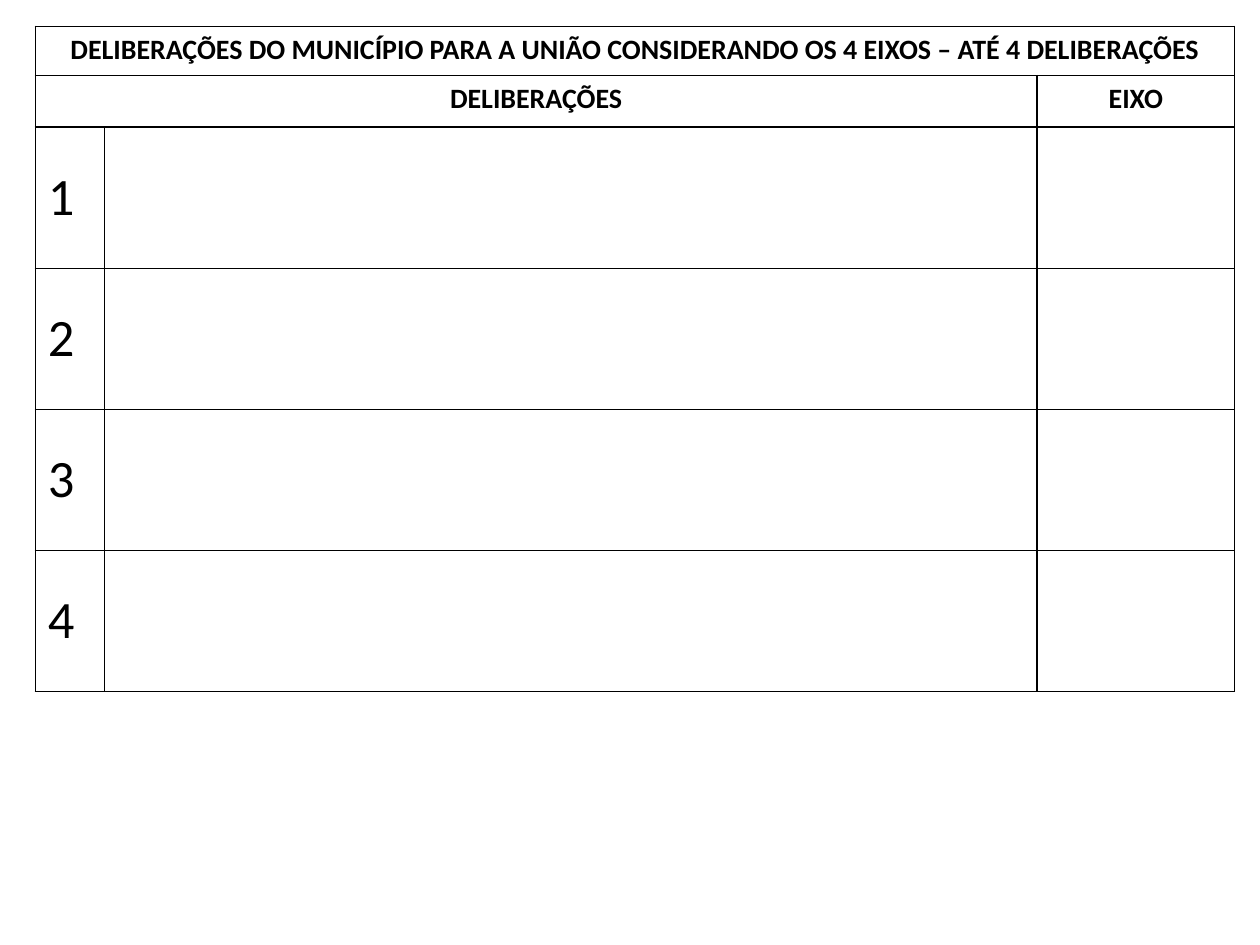
from lxml import etree
from pptx import Presentation
from pptx import util as u
from pptx.dml.color import RGBColor
from pptx.enum import text
from pptx.oxml import ns

BLACK = RGBColor(0x00, 0x00, 0x00)
WIDE, HIGH = 10, 7.5
COLS = [0.55, 7.4, 1.57]
ROWS = [0.39, 0.41] + [1.12] * 4
HEAD = {"size": u.Pt(16), "bold": True}
NUM = {"size": u.Pt(30), "bold": False}
MID = {"alignment": text.PP_ALIGN.CENTER}
LOOSE = {"line_spacing": 1.5}


class Page:
    """Holds the style and the slide being drawn."""

    def __init__(self, deck, font="Calibri", ink=BLACK, line=1):
        self.font, self.ink, self.line = font, ink, line
        self.slide = deck.slides.add_slide(deck.slide_layouts[6])

    def grid(self, left, top, cols, rows):
        size = (left * WIDE, top * HIGH, sum(cols), sum(rows))
        frame = self.slide.shapes.add_table(len(rows), len(cols), *map(u.Inches, size))
        table = frame.table
        table.first_row = table.horz_banding = False
        for col, width in zip(table.columns, cols):
            col.width = u.Inches(width)
        for row, height in zip(table.rows, rows):
            row.height = u.Inches(height)
        for cell in table.iter_cells():
            self.edge(cell)
            cell.fill.background()
        return table

    def edge(self, cell):
        props = cell._tc.get_or_add_tcPr()
        for side in ("lnL", "lnR", "lnT", "lnB"):
            line = etree.SubElement(props, ns.qn(f"a:{side}"), w=str(u.Pt(self.line)))
            fill = etree.SubElement(line, ns.qn("a:solidFill"))
            etree.SubElement(fill, ns.qn("a:srgbClr"), val=str(self.ink))

    def label(self, cell, words, face, para):
        part = cell.text_frame.paragraphs[0]
        run = part.add_run()
        run.text = words
        run.font.color.rgb = self.ink
        for item, style in ((part, para), (run.font, {"name": self.font, **face})):
            for key, value in style.items():
                setattr(item, key, value)


def main():
    deck = Presentation()
    deck.slide_width, deck.slide_height = u.Inches(WIDE), u.Inches(HIGH)
    page = Page(deck)
    table = page.grid(0.028, 0.028, COLS, ROWS)
    table.cell(0, 0).merge(table.cell(0, 2))
    table.cell(1, 0).merge(table.cell(1, 1))
    heads = {
        (0, 0): "DELIBERAÇÕES DO MUNICÍPIO PARA A UNIÃO CONSIDERANDO OS 4 EIXOS – ATÉ 4 DELIBERAÇÕES",
        (1, 0): "DELIBERAÇÕES",
        (1, 2): "EIXO",
    }
    for spot, words in heads.items():
        page.label(table.cell(*spot), words, HEAD, MID)
    for num in range(1, 5):
        page.label(table.cell(num + 1, 0), str(num), NUM, LOOSE)
    deck.save("out.pptx")


if __name__ == "__main__":
    main()
